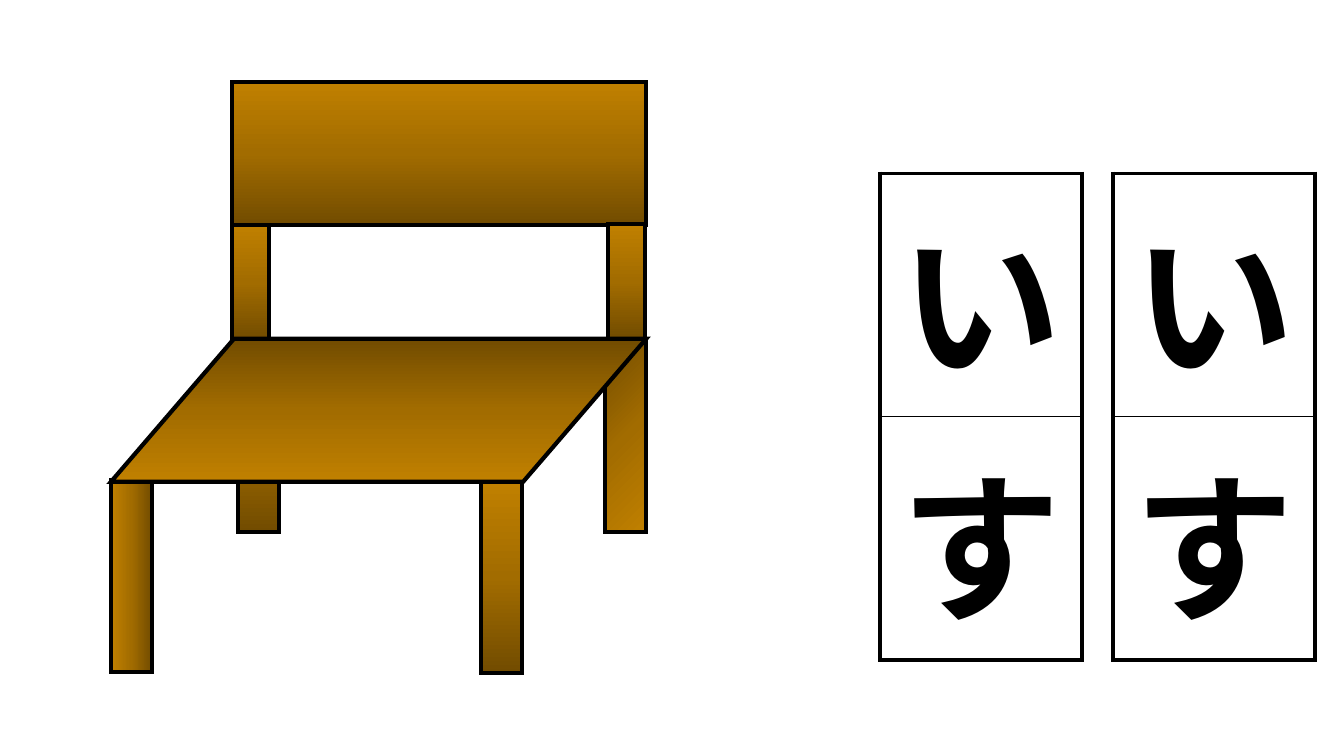
from copy import deepcopy
from dataclasses import dataclass

from lxml.etree import SubElement
from pptx import Presentation
from pptx.dml.color import RGBColor
from pptx.enum.shapes import MSO_SHAPE
from pptx.enum.text import MSO_ANCHOR, PP_ALIGN
from pptx.oxml.ns import qn
from pptx.shapes.autoshape import Shape
from pptx.shapes.group import GroupShape
from pptx.slide import Slide
from pptx.table import _Cell
from pptx.util import Inches, Pt

FONT = "Noto Sans CJK JP"
BLACK = "000000"
WOOD = ((0, "724C00"), (0.5, "A26C00"), (1, "C08000"))
WORD = "いす"
CARD_LEFTS = (11.04, 8.73)
CARD_TOP, CARD_WIDTH, CARD_ROW = 1.72, 2, 1.97
THICK, THIN = 3, 1
LEG = (0.41, 1.91)
POST = (0.37, 1.14)


@dataclass(frozen=True)
class Plank:
    """A wooden part; the angle runs counter-clockwise from dark to light."""
    left: float
    top: float
    size: tuple[float, float]
    angle: int
    preset: MSO_SHAPE = MSO_SHAPE.RECTANGLE


BACKREST = Plank(2.3, 0.81, (4.11, 1.42), 90)
POSTS = (Plank(2.3, 2.23, POST, 90), Plank(6.03, 2.22, POST, 90))
BACK_LEGS = (Plank(2.36, 3.37, LEG, 90), Plank(6, 3.37, LEG, 315))
FRONT_LEFT_LEG = Plank(1.1, 4.76, LEG, 180)
FRONT_RIGHT_LEG = Plank(4.77, 4.77, LEG, 90)
SEAT = Plank(1.1, 3.36, (5.31, 1.42), 270, MSO_SHAPE.PARALLELOGRAM)
CHAIR = (FRONT_LEFT_LEG, BACKREST, *POSTS, *BACK_LEGS, FRONT_RIGHT_LEG, SEAT)


def color(value: str) -> RGBColor:
    return RGBColor.from_string(value)


def fill_with_wood(shape: Shape, angle: int) -> None:
    shape.fill.gradient()
    shape.fill.gradient_angle = angle
    stop_list = shape._element.spPr.find(qn("a:gradFill")).find(qn("a:gsLst"))
    stop_list.append(deepcopy(stop_list[0]))
    for stop, (position, shade) in zip(shape.fill.gradient_stops, WOOD):
        stop.position = position
        stop.color.rgb = color(shade)


def outline_with_sharp_corners(shape: Shape) -> None:
    shape.line.color.rgb = color(BLACK)
    shape.line.width = Pt(THICK)
    SubElement(shape._element.spPr.find(qn("a:ln")), qn("a:miter"), lim="800000")


def add_plank(group: GroupShape, plank: Plank) -> None:
    width, height = plank.size
    shape = group.shapes.add_shape(
        plank.preset, Inches(plank.left), Inches(plank.top), Inches(width), Inches(height))
    shape.shadow.inherit = False
    if plank.preset == MSO_SHAPE.PARALLELOGRAM:
        shape.adjustments[0] = 0.86
    fill_with_wood(shape, plank.angle)
    outline_with_sharp_corners(shape)


def set_borders(cell: _Cell, top: int, bottom: int) -> None:
    properties = cell._tc.get_or_add_tcPr()
    for side, width in (("L", THICK), ("R", THICK), ("T", top), ("B", bottom)):
        border = SubElement(properties, qn(f"a:ln{side}"), w=str(Pt(width)))
        solid = SubElement(border, qn("a:solidFill"))
        SubElement(solid, qn("a:srgbClr"), val=BLACK)


def write_letter(cell: _Cell, letter: str) -> None:
    cell.vertical_anchor = MSO_ANCHOR.MIDDLE
    para = cell.text_frame.paragraphs[0]
    para.alignment = PP_ALIGN.CENTER
    span = para.add_run()
    span.text = letter
    span.font.size = Pt(115)
    span.font.bold = True
    span.font.color.rgb = color(BLACK)
    span.font.name = FONT
    SubElement(span._r.get_or_add_rPr(), qn("a:ea"), typeface=FONT)


def add_word_card(page: Slide, left: float) -> None:
    frame = page.shapes.add_table(
        len(WORD), 1, Inches(left), Inches(CARD_TOP),
        Inches(CARD_WIDTH), Inches(CARD_ROW * len(WORD)))
    table = frame.table
    table.first_row = table.horz_banding = False
    last = len(WORD) - 1
    for index, letter in enumerate(WORD):
        cell = table.cell(index, 0)
        set_borders(cell, THICK if index == 0 else THIN, THICK if index == last else THIN)
        cell.fill.background()
        write_letter(cell, letter)


def main() -> None:
    deck = Presentation()
    deck.slide_width, deck.slide_height = Inches(13.33), Inches(7.5)
    page = deck.slides.add_slide(deck.slide_layouts[6])
    for left in CARD_LEFTS:
        add_word_card(page, left)
    chair = page.shapes.add_group_shape()
    for plank in CHAIR:
        add_plank(chair, plank)
    deck.save("out.pptx")


if __name__ == "__main__":
    main()
